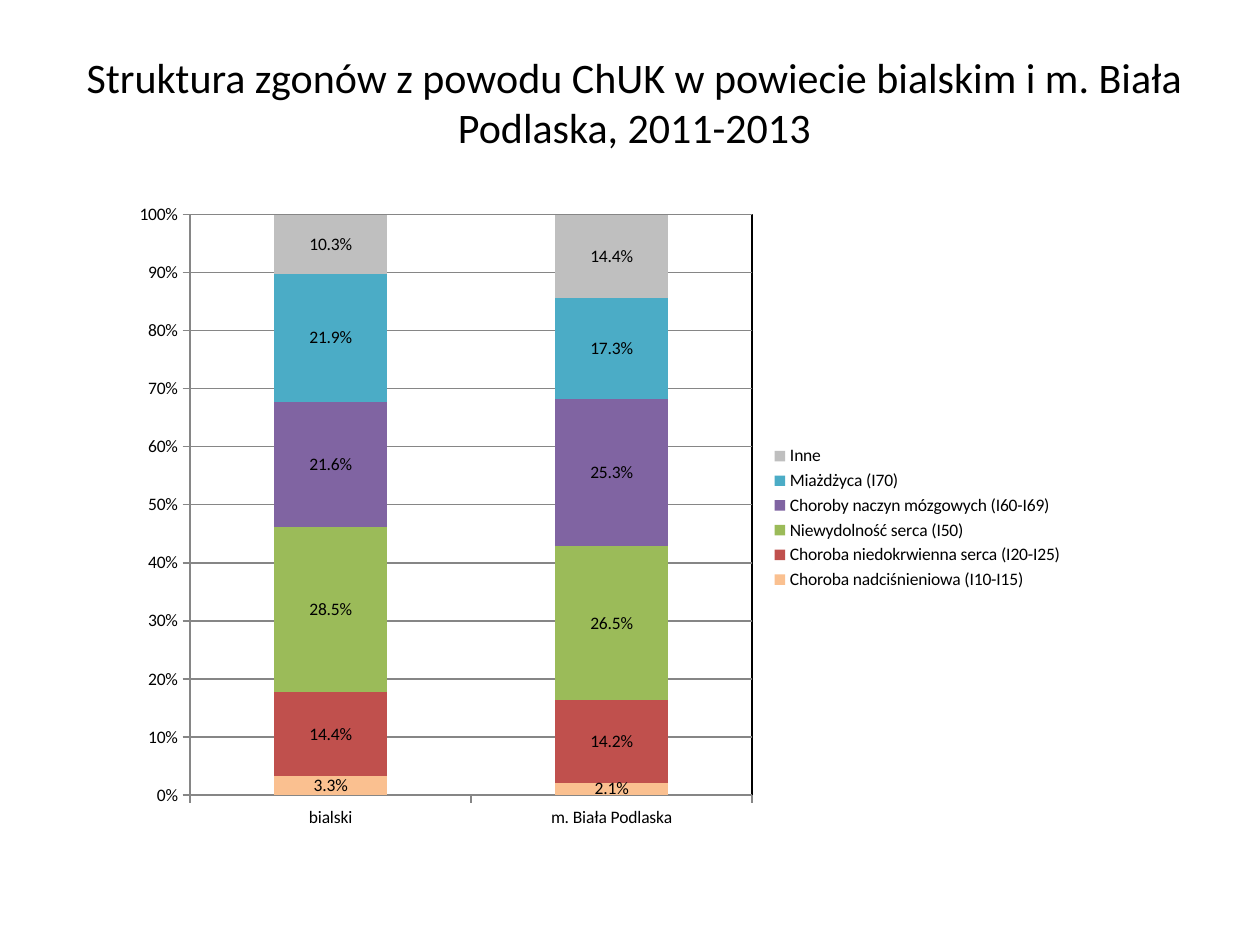
from lxml import etree
from pptx import Presentation
from pptx import util as u
from pptx.chart.data import CategoryChartData
from pptx.dml.color import RGBColor
from pptx.enum import chart as ch, text
from pptx.oxml import parse_xml
from pptx.oxml.ns import nsdecls, qn

FONT = "Calibri"
BLACK = RGBColor(0x00, 0x00, 0x00)
GRID_GRAY = RGBColor(0x86, 0x86, 0x86)
PEACH = RGBColor(0xFA, 0xC0, 0x90)
RED = RGBColor(0xC0, 0x50, 0x4D)
GREEN = RGBColor(0x9B, 0xBB, 0x59)
PURPLE = RGBColor(0x80, 0x64, 0xA2)
TEAL = RGBColor(0x4B, 0xAC, 0xC6)
GRAY = RGBColor(0xBF, 0xBF, 0xBF)

TITLE = "Struktura zgonów z powodu ChUK w powiecie bialskim i m. Biała Podlaska, 2011-2013"
COUNTIES = ["bialski", "m. Biała Podlaska"]
CAUSES = [
    ("Choroba nadciśnieniowa (I10-I15)", (0.033, 0.021), PEACH),
    ("Choroba niedokrwienna serca (I20-I25)", (0.144, 0.142), RED),
    ("Niewydolność serca (I50)", (0.285, 0.265), GREEN),
    ("Choroby naczyn mózgowych (I60-I69)", (0.216, 0.253), PURPLE),
    ("Miażdżyca (I70)", (0.219, 0.173), TEAL),
    ("Inne", (0.103, 0.144), GRAY),
]


class SlideBuilder:
    """Holds the shared style and the current slide."""

    def __init__(self, slide):
        self.slide = slide

    def style(self, font, size):
        font.name = FONT
        font.size = u.Pt(size)
        font.bold = False
        font.color.rgb = BLACK

    def title(self, wording, left, top, width, height):
        heading = self.slide.shapes.title
        heading.left, heading.top = u.Inches(left), u.Inches(top)
        heading.width, heading.height = u.Inches(width), u.Inches(height)
        frame = heading.text_frame
        frame.text = wording
        frame.word_wrap = True
        frame.vertical_anchor = text.MSO_ANCHOR.MIDDLE
        frame.paragraphs[0].alignment = text.PP_ALIGN.CENTER
        self.style(frame.paragraphs[0].font, 24)

    def stacked_chart(self, categories, parts, left, top, width, height):
        data = CategoryChartData(number_format="0.0%")
        data.categories = categories
        for name, shares, _ in parts:
            data.add_series(name, shares)
        chart = self.slide.shapes.add_chart(
            ch.XL_CHART_TYPE.COLUMN_STACKED_100, u.Inches(left), u.Inches(top),
            u.Inches(width), u.Inches(height), data).chart
        self.style(chart.font, 10)
        chart.has_title = False
        chart.has_legend = True
        chart.legend.position = ch.XL_LEGEND_POSITION.RIGHT
        chart.legend.include_in_layout = False

        # Columns and their labels
        plot = chart.plots[0]
        plot.gap_width, plot.overlap = 150, 100
        plot.vary_by_categories = False
        for series, (_, _, color) in zip(plot.series, parts):
            series.format.fill.solid()
            series.format.fill.fore_color.rgb = color
            labels = series.data_labels
            labels.show_value = True
            labels.number_format = "0.0%"
            labels.number_format_is_linked = False
            labels.position = ch.XL_LABEL_POSITION.CENTER

        # Axes and gridlines
        shares_axis = chart.value_axis
        shares_axis.minimum_scale, shares_axis.maximum_scale = 0, 1
        shares_axis.major_unit = 0.1
        shares_axis.has_major_gridlines = True
        shares_axis.tick_labels.number_format = "0%"
        shares_axis.tick_labels.number_format_is_linked = False
        for axis in (shares_axis, chart.category_axis):
            axis.major_tick_mark = ch.XL_TICK_MARK.OUTSIDE
            axis.minor_tick_mark = ch.XL_TICK_MARK.NONE
        for part in (shares_axis, chart.category_axis, shares_axis.major_gridlines):
            part.format.line.color.rgb = GRID_GRAY
            part.format.line.width = u.Pt(0.75)
        return chart

    def frame_plot(self, chart, x, y, w, h):
        """Place the inner plot area, as shares of the chart, and outline it."""
        area = chart.element.find(".//" + qn("c:plotArea"))
        for old in area.findall(qn("c:layout")):
            area.remove(old)
        layout = parse_xml(
            f'<c:layout {nsdecls("c")}><c:manualLayout><c:layoutTarget val="inner"/>'
            '<c:xMode val="edge"/><c:yMode val="edge"/></c:manualLayout></c:layout>')
        for tag, share in zip("xywh", (x, y, w, h)):
            etree.SubElement(layout[0], qn(f"c:{tag}")).set("val", str(share))
        area.insert(0, layout)
        area.append(parse_xml(
            f'<c:spPr {nsdecls("c", "a")}><a:noFill/><a:ln w="9525"><a:solidFill>'
            f'<a:srgbClr val="{BLACK}"/></a:solidFill></a:ln></c:spPr>'))


def main():
    deck = Presentation()
    deck.slide_width, deck.slide_height = u.Inches(10), u.Inches(7.5)
    builder = SlideBuilder(deck.slides.add_slide(deck.slide_layouts[5]))

    # Heading
    builder.title(TITLE, 0.5, 0.3, 9.07, 1.01)

    # Causes of death by county
    deaths = builder.stacked_chart(COUNTIES, CAUSES, 0.98, 1.55, 7.56, 5.12)
    builder.frame_plot(deaths, 0.07, 0.03, 0.59, 0.9)

    deck.save("out.pptx")


if __name__ == "__main__":
    main()
